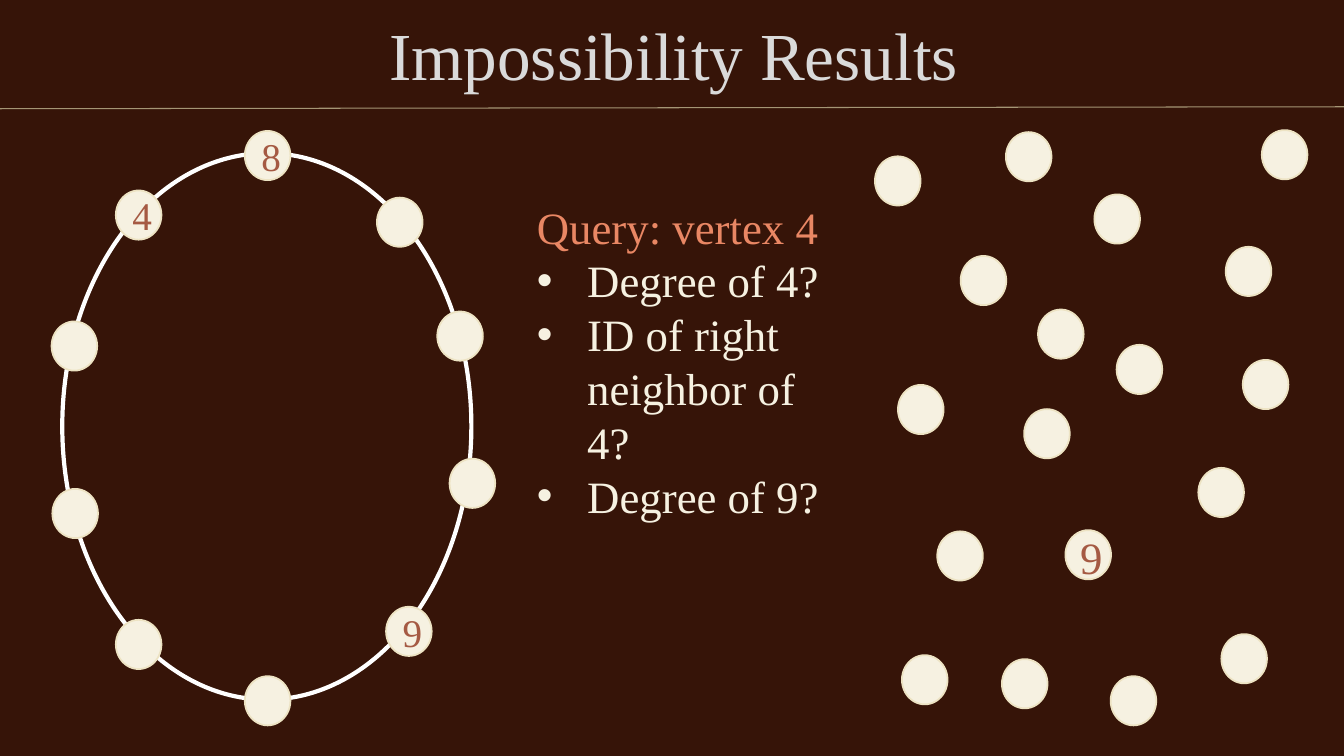
import pptx
import pptx.util
import pptx.dml.color
import pptx.enum.shapes
import pptx.enum.text
import pptx.oxml
import pptx.oxml.ns

Cm = pptx.util.Cm
Pt = pptx.util.Pt
RGBColor = pptx.dml.color.RGBColor
ALIGN = pptx.enum.text.PP_ALIGN
ANCHOR = pptx.enum.text.MSO_ANCHOR
NS = pptx.oxml.ns.nsdecls("a")

BROWN = RGBColor(0x36, 0x14, 0x08)
SILVER = RGBColor(0xDA, 0xDA, 0xDA)
CREAM = RGBColor(0xF6, 0xF1, 0xE1)
SAND = RGBColor(0xED, 0xE3, 0xC3)
TAN = RGBColor(0xA5, 0x96, 0x75)
RUST = RGBColor(0xA5, 0x5A, 0x43)
CORAL = RGBColor(0xE9, 0x87, 0x64)
WHITE = RGBColor(0xFF, 0xFF, 0xFF)

# Left, top in cm and the label of each vertex
RING_VERTICES = [
    (2.92, 15.62, ""), (11.02, 7.85, ""), (1.3, 8.1, ""), (9.5, 4.98, ""),
    (6.17, 3.3, "8"), (6.17, 17.04, ""), (11.33, 11.56, ""),
    (9.73, 15.29, "9"), (1.32, 12.32, ""), (2.92, 4.8, "4"),
]
LOOSE_VERTICES = [
    (25.35, 3.33), (22.05, 3.94), (24.21, 6.45), (22.63, 9.7), (26.16, 7.8),
    (27.58, 4.9), (23.62, 13.39), (25.81, 10.31), (26.85, 13.36),
    (25.25, 16.61), (22.73, 16.51), (30.2, 11.79), (30.78, 15.98),
    (31.32, 9.07), (28.14, 8.69), (27.99, 17.04), (31.8, 3.28), (30.89, 6.22),
]
QUERY = [
    ("Query: vertex 4", CORAL, False),
    ("Degree of 4?", CREAM, True),
    ("ID of right neighbor of 4?", CREAM, True),
    ("Degree of 9?", CREAM, True),
]


class SlideBuilder:
    font_name = "Times New Roman"
    vertex_size = (1.15, 1.24)

    def __init__(self, slide):
        self.slide = slide
        slide.background.fill.solid()
        slide.background.fill.fore_color.rgb = BROWN

    def styled_run(self, paragraph, text, size, color):
        run = paragraph.add_run()
        run.text = text
        for name, value in {"name": self.font_name, "size": Pt(size)}.items():
            setattr(run.font, name, value)
        run.font.color.rgb = color
        return run

    def ellipse(self, box, line_color, line_width, fill=None, parent=None):
        oval = (parent or self.slide).shapes.add_shape(
            pptx.enum.shapes.MSO_SHAPE.OVAL, *map(Cm, box))
        oval.shadow.inherit = False
        if fill is None:
            oval.fill.background()
        else:
            oval.fill.solid()
            oval.fill.fore_color.rgb = fill
        oval.line.color.rgb = line_color
        oval.line.width = Pt(line_width)
        return oval

    def vertex(self, left, top, label="", parent=None):
        oval = self.ellipse((left, top, *self.vertex_size), SAND, 1.25, CREAM, parent)
        if label:
            oval.text_frame.vertical_anchor = ANCHOR.MIDDLE
            paragraph = oval.text_frame.paragraphs[0]
            paragraph.alignment = ALIGN.CENTER
            self.styled_run(paragraph, label, 28, RUST)

    def rule(self, start, end):
        connector = self.slide.shapes.add_connector(
            pptx.enum.shapes.MSO_CONNECTOR.STRAIGHT, *map(Cm, start + end))
        connector.line.color.rgb = TAN
        connector.line.width = Pt(0.75)
        connector._element.spPr.append(pptx.oxml.parse_xml(f"<a:effectLst {NS}/>"))

    def text_box(self, box):
        frame = self.slide.shapes.add_textbox(*map(Cm, box)).text_frame
        frame.word_wrap = True
        return frame

    def title(self, text, box):
        frame = self.text_box(box)
        frame.vertical_anchor = ANCHOR.MIDDLE
        paragraph = frame.paragraphs[0]
        paragraph.alignment = ALIGN.CENTER
        properties = self.styled_run(paragraph, text, 48, SILVER)._r.get_or_add_rPr()
        properties.insert(0, pptx.oxml.parse_xml(
            f'<a:ln {NS} w="9525"><a:solidFill><a:srgbClr val="404040">'
            '<a:alpha val="10000"/></a:srgbClr></a:solidFill></a:ln>'))
        properties.find(pptx.oxml.ns.qn("a:solidFill")).addnext(pptx.oxml.parse_xml(
            f'<a:effectLst {NS}><a:outerShdw blurRad="38100" dist="38100" dir="2700000">'
            '<a:srgbClr val="000000"><a:alpha val="60000"/></a:srgbClr>'
            '</a:outerShdw></a:effectLst>'))

    def text_lines(self, lines, box):
        """Fill one box with (text, colour, bulleted) lines as paragraphs."""
        frame = self.text_box(box)
        for index, (text, color, bulleted) in enumerate(lines):
            paragraph = frame.add_paragraph() if index else frame.paragraphs[0]
            self.styled_run(paragraph, text, 32, color)
            if bulleted:
                properties = paragraph._p.get_or_add_pPr()
                indent = Cm(1.27)
                properties.set("marL", str(indent))
                properties.set("indent", str(-indent))
                for bullet in ('buFont {} typeface="Arial"', 'buChar {} char="•"'):
                    properties.append(pptx.oxml.parse_xml(f"<a:{bullet.format(NS)}/>"))


def main():
    presentation = pptx.Presentation()
    presentation.slide_width = Cm(33.87)
    presentation.slide_height = Cm(19.05)
    slide = presentation.slides.add_slide(presentation.slide_layouts[6])
    builder = SlideBuilder(slide)

    builder.ellipse((1.57, 3.86, 10.31, 13.77), WHITE, 3)
    builder.title("Impossibility Results", (0.05, 0, 33.87, 2.69))
    builder.rule((0, 2.74), (33.87, 2.69))
    for left, top, label in RING_VERTICES:
        builder.vertex(left, top, label)
    loose_group = slide.shapes.add_group_shape()
    for left, top in LOOSE_VERTICES:
        builder.vertex(left, top, parent=loose_group)
    builder.text_lines(QUERY, (13.28, 4.9, 7.75, 9.83))
    builder.text_lines([("9", RUST, False)], (26.97, 13.23, 1.75, 1.63))

    presentation.save("out.pptx")


if __name__ == "__main__":
    main()
